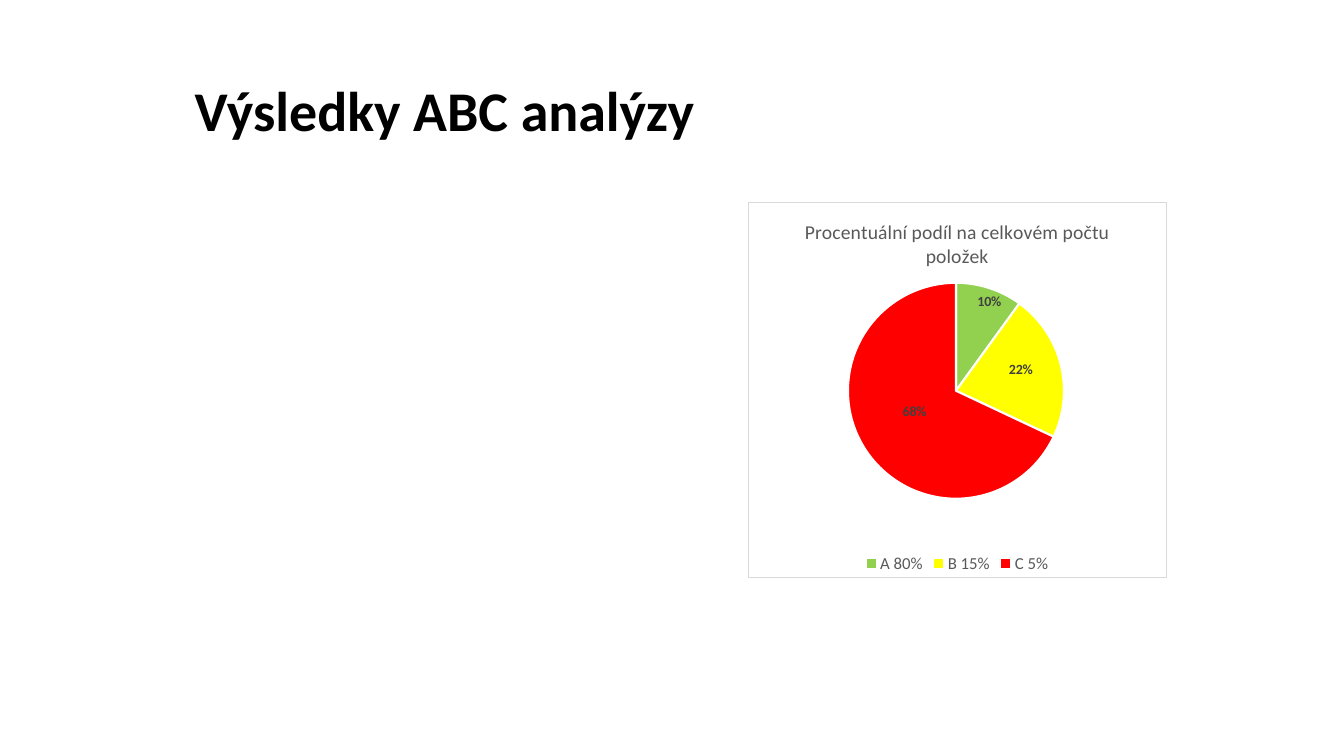
from lxml import etree
from pptx import Presentation
from pptx.chart.data import CategoryChartData
from pptx.dml.color import RGBColor
from pptx.enum.chart import XL_CHART_TYPE, XL_LABEL_POSITION, XL_LEGEND_POSITION
from pptx.enum.text import MSO_ANCHOR
from pptx.oxml import parse_xml
from pptx.oxml.ns import nsdecls, qn
from pptx.util import Pt

FONT = "Calibri"
CHART_TITLE = "Procentuální podíl na celkovém počtu položek"
# category, share, slice colour, label offset as fractions of the chart size
SLICES = [
    ("A 80%", 0.10, "92D050", (0.04, -0.1)),
    ("B 15%", 0.22, "FFFF00", (0.03, -0.02)),
    ("C 5%", 0.68, "FF0000", (0.01, -0.02)),
]


def color(hex_string):
    return RGBColor.from_string(hex_string)


def format_font(font, size, hex_color, bold=False):
    font.name = FONT
    font.size = Pt(size)
    font.bold = bold
    font.color.rgb = color(hex_color)


def write_text(text_frame, text, size, hex_color, bold=False, line_spacing=None):
    paragraph = text_frame.paragraphs[0]
    paragraph.line_spacing = line_spacing
    run = paragraph.add_run()
    run.text = text
    format_font(run.font, size, hex_color, bold)


def add_heading(slide, text, left, top, width, height):
    text_frame = slide.shapes.add_textbox(Pt(left), Pt(top), Pt(width), Pt(height)).text_frame
    text_frame.word_wrap = True
    text_frame.vertical_anchor = MSO_ANCHOR.MIDDLE
    write_text(text_frame, text, size=40, hex_color="000000", bold=True, line_spacing=0.9)


def manual_layout(**settings):
    layout = parse_xml(f"<c:layout {nsdecls('c')}><c:manualLayout/></c:layout>")
    for name, value in settings.items():
        etree.SubElement(layout[0], qn(f"c:{name}")).set("val", str(value))
    return layout


def set_plot_area(chart, x, y, w, h):
    plot_area = chart._chartSpace.chart.plotArea
    for layout in plot_area.findall(qn("c:layout")):
        plot_area.remove(layout)
    plot_area.insert(0, manual_layout(
        layoutTarget="inner", xMode="edge", yMode="edge", x=x, y=y, w=w, h=h))


def set_chart_frame(chart, fill, border):
    """Fill and outline the whole chart area."""
    frame = parse_xml(
        f"<c:spPr {nsdecls('c', 'a')}>"
        f'<a:solidFill><a:srgbClr val="{fill}"/></a:solidFill>'
        f'<a:ln w="{Pt(0.75)}"><a:solidFill><a:srgbClr val="{border}"/></a:solidFill></a:ln>'
        "</c:spPr>")
    chart._chartSpace.chart.addnext(frame)


def format_slice(series, index, fill, label_offset):
    point = series.points[index]
    point.format.fill.solid()
    point.format.fill.fore_color.rgb = color(fill)
    point.format.line.color.rgb = color("FFFFFF")
    point.format.line.width = Pt(1.5)
    format_font(point.data_label.font, 10, "404040", bold=True)
    point.data_label.position = XL_LABEL_POSITION.CENTER
    label = series._element.find(qn("c:dLbls")).findall(qn("c:dLbl"))[index]
    layout = manual_layout(x=label_offset[0], y=label_offset[1])
    label.find(qn("c:idx")).addnext(layout)
    layout.addnext(parse_xml(
        f'<c:numFmt {nsdecls("c")} formatCode="0%" sourceLinked="0"/>'))


def add_pie(slide, left, top, width, height):
    data = CategoryChartData(number_format="0%")
    data.categories = [category for category, *_ in SLICES]
    data.add_series(CHART_TITLE, [share for _, share, *_ in SLICES])
    chart = slide.shapes.add_chart(
        XL_CHART_TYPE.PIE, Pt(left), Pt(top), Pt(width), Pt(height), data).chart
    format_font(chart.font, 10, "000000")
    chart.has_title = True
    write_text(chart.chart_title.text_frame, CHART_TITLE, size=14, hex_color="595959")
    chart.chart_title.include_in_layout = False
    chart.has_legend = True
    chart.legend.position = XL_LEGEND_POSITION.BOTTOM
    chart.legend.include_in_layout = False
    format_font(chart.legend.font, 12, "595959")
    plot = chart.plots[0]
    plot.vary_by_categories = True
    for index, (_, _, fill, label_offset) in enumerate(SLICES):
        format_slice(plot.series[0], index, fill, label_offset)
    set_plot_area(chart, x=0.09, y=0.215, w=0.814, h=0.575)
    set_chart_frame(chart, fill="FFFFFF", border="D9D9D9")


def main():
    presentation = Presentation()
    presentation.slide_width = Pt(960)
    presentation.slide_height = Pt(540)
    slide = presentation.slides.add_slide(presentation.slide_layouts[6])
    add_heading(slide, "Výsledky ABC analýzy", 132, 28.8, 828, 104.4)
    add_pie(slide, 534, 144, 299.5, 269)
    presentation.save("out.pptx")


if __name__ == "__main__":
    main()
